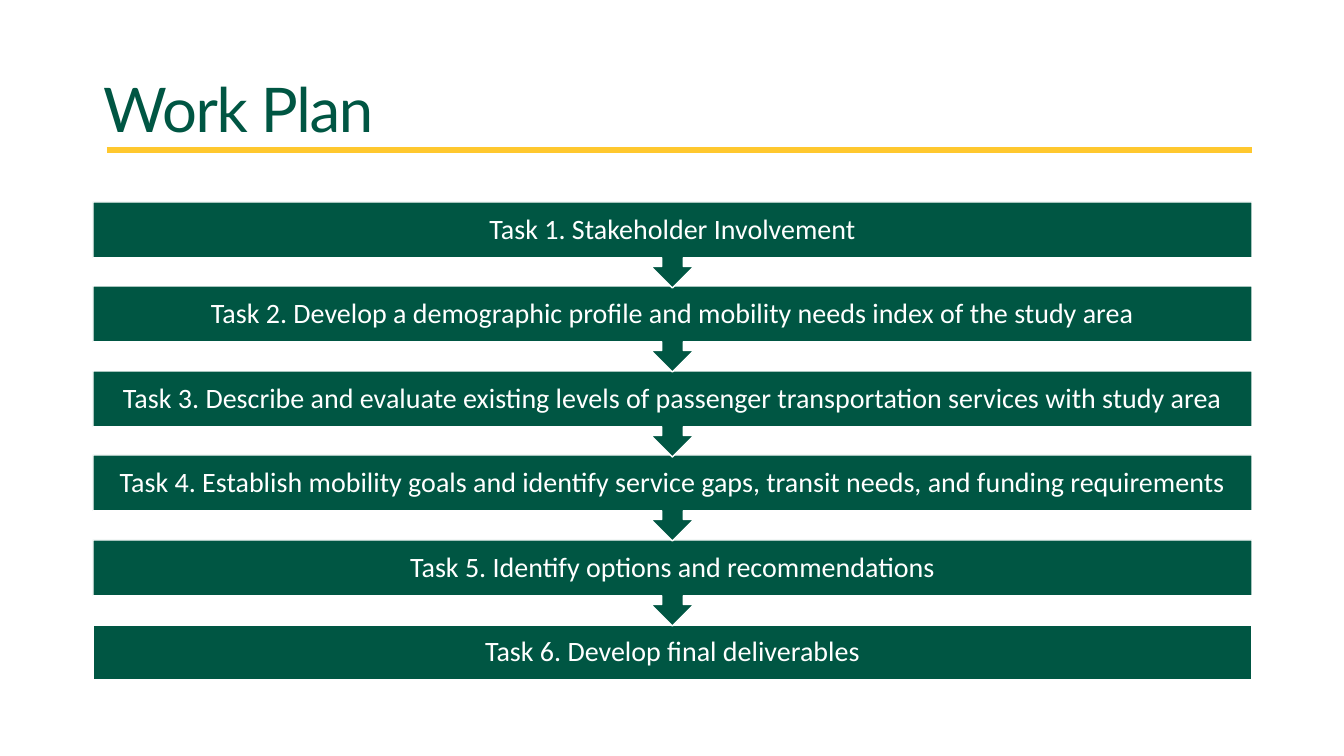
from pptx import Presentation
from pptx.dml.color import RGBColor
from pptx.enum.shapes import MSO_CONNECTOR as CONN, MSO_SHAPE as SHAPE
from pptx.enum.text import MSO_ANCHOR as ANCHOR, PP_ALIGN as ALIGN
from pptx.oxml.ns import qn
from pptx.util import Emu, Pt
from lxml import etree

GREEN = RGBColor(0x00, 0x56, 0x43)
GOLD = RGBColor(0xFF, 0xC8, 0x2E)
WHITE = RGBColor(0xFF, 0xFF, 0xFF)

WIDTH, HEIGHT = 1344, 756
LEFT, BAR_W = 93, 1159
FIRST_TOP, LAST_TOP = 202, 625
BAR_H, CALLOUT_H = 55, 86

TASKS = [
    "Task 1. Stakeholder Involvement",
    "Task 2. Develop a demographic profile and mobility needs index of the study area",
    "Task 3. Describe and evaluate existing levels of passenger transportation services with study area",
    "Task 4. Establish mobility goals and identify service gaps, transit needs, and funding requirements",
    "Task 5. Identify options and recommendations",
    "Task 6. Develop final deliverables",
]


def px(n):
    """Convert px at 100.8 to the inch into EMU."""
    return Emu(round(n * 914400 / 100.8))


class Deck:
    title_font, body_font = "Lato", "Calibri"
    title_size, body_size = Pt(44), Pt(20)

    def __init__(self):
        self.prs = Presentation()
        self.prs.slide_width, self.prs.slide_height = px(WIDTH), px(HEIGHT)
        self.s = self.prs.slides.add_slide(self.prs.slide_layouts[5])

    def add_text(self, tf, text, font, size, color, align):
        tf.word_wrap = True
        tf.vertical_anchor = ANCHOR.MIDDLE
        p = tf.paragraphs[0]
        p.alignment = align
        p.line_spacing = 0.9
        r = p.add_run()
        r.text = text
        r.font.name, r.font.size = font, size
        r.font.color.rgb = color
        return r

    def title(self, text, x, y, w, h):
        sp = self.s.shapes.title
        sp.left, sp.top, sp.width, sp.height = map(px, (x, y, w, h))
        r = self.add_text(sp.text_frame, text, self.title_font, self.title_size,
                          GREEN, ALIGN.LEFT)
        r.font._element.set("spc", "-100")

    def rule(self, x1, x2, y):
        line = self.s.shapes.add_connector(CONN.STRAIGHT, px(x1), px(y), px(x2), px(y))
        line.line.color.rgb = GOLD
        line.line.width = Pt(4.5)
        etree.SubElement(line._element.spPr, qn("a:effectLst"))

    def task(self, text, kind, x, y, w, h):
        sp = self.s.shapes.add_shape(kind, *map(px, (x, y, w, h)))
        sp.shadow.inherit = False
        sp.fill.solid()
        sp.fill.fore_color.rgb = GREEN
        sp.line.color.rgb = WHITE
        sp.line.width = Pt(1)
        tf = sp.text_frame
        tf.margin_left = tf.margin_right = tf.margin_top = tf.margin_bottom = px(16)
        self.add_text(tf, text, self.body_font, self.body_size, WHITE, ALIGN.CENTER)


def main():
    deck = Deck()

    # Title and rule
    deck.rule(107, 1252, 150)
    deck.title("Work Plan", LEFT, 40, BAR_W, 146)

    # Task chain, last task at the back so each arrow lies over the next bar
    last = len(TASKS) - 1
    for i, text in reversed(list(enumerate(TASKS))):
        top = FIRST_TOP + (LAST_TOP - FIRST_TOP) * i // last
        if i == last:
            deck.task(text, SHAPE.RECTANGLE, LEFT, top, BAR_W, BAR_H)
        else:
            deck.task(text, SHAPE.DOWN_ARROW_CALLOUT, LEFT, top, BAR_W, CALLOUT_H)

    deck.prs.save("out.pptx")


if __name__ == "__main__":
    main()
